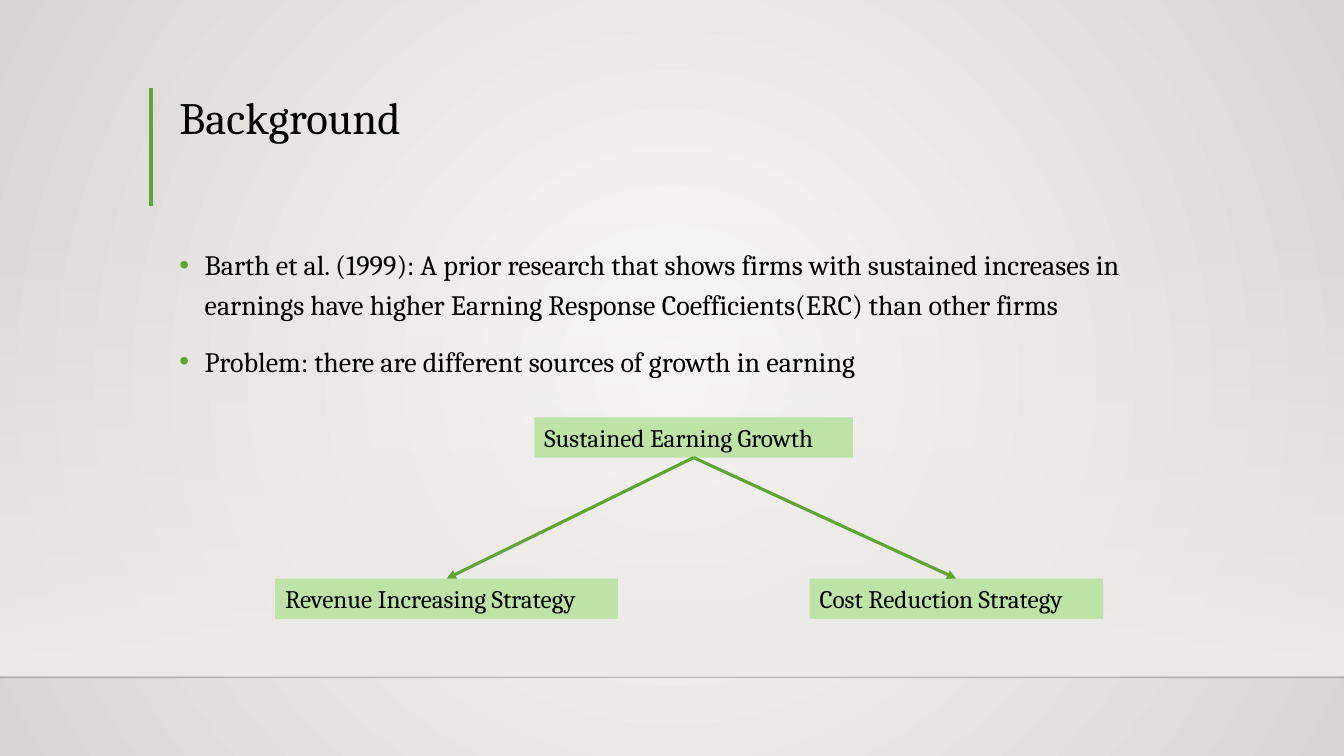
from lxml.etree import SubElement
from pptx import Presentation
from pptx.dml.color import RGBColor
from pptx.enum.shapes import MSO_CONNECTOR as LINK, MSO_SHAPE as SHAPE
from pptx.enum.text import MSO_ANCHOR as ANCHOR, MSO_AUTO_SIZE as SIZE, PP_ALIGN as ALIGN
from pptx.oxml import parse_xml
from pptx.oxml.ns import nsdecls, qn
from pptx.util import Inches, Pt

COLORS = {
    "text": "000000",
    "rule": "000001",
    "green": "5FA534",
    "pale": "BDE3A6",
    "light": "FAFAF9",
    "dark": "D7D5D2",
    "floor": "EDEBE7",
}
FONT = "Cambria"
LEFT = 1.68


def color(name):
    return RGBColor.from_string(COLORS[name])


def blend(stops, shade):
    marks = "".join(
        f'<a:gs pos="{pos * 1000}"><a:srgbClr val="{COLORS[name]}">'
        f'<a:alpha val="{alpha * 1000}"/></a:srgbClr></a:gs>'
        for pos, name, alpha in stops
    )
    return parse_xml(
        f'<a:gradFill {nsdecls("a")} rotWithShape="1">'
        f"<a:gsLst>{marks}</a:gsLst>{shade}</a:gradFill>"
    )


def swap_fill(props, fill):
    props.replace(props.find(qn("a:gradFill")), fill)


def place(shape, left, top, width, height):
    shape.left, shape.top = Inches(left), Inches(top)
    shape.width, shape.height = Inches(width), Inches(height)


def write(shape, text, size=18, anchor=ANCHOR.TOP, spacing=1.0, bullet=False):
    frame = shape.text_frame
    frame.word_wrap = True
    frame.auto_size = SIZE.NONE
    frame.vertical_anchor = anchor
    para = frame.paragraphs[0]
    para.alignment = ALIGN.LEFT
    para.line_spacing = spacing
    para.space_before = Pt(0)
    if bullet:
        props = para._p.get_or_add_pPr()
        props.set("marL", str(Inches(0.25)))
        props.set("indent", str(Inches(-0.25)))
        tint = SubElement(props, qn("a:buClr"))
        SubElement(tint, qn("a:srgbClr"), val=COLORS["green"])
        SubElement(props, qn("a:buFont"), typeface="Arial")
        SubElement(props, qn("a:buChar"), char="•")
    run = para.add_run()
    run.text = text
    run.font.name = FONT
    run.font.size = Pt(size)
    run.font.color.rgb = color("text")


def add_rect(slide, left, top, width, height):
    rect = slide.shapes.add_shape(
        SHAPE.RECTANGLE, Inches(left), Inches(top), Inches(width), Inches(height)
    )
    rect.shadow.inherit = False
    rect.line.fill.background()
    return rect


def add_label(slide, text, left, top, width):
    label = add_rect(slide, left, top, width, 0.4)
    label.fill.solid()
    label.fill.fore_color.rgb = color("pale")
    write(label, text)
    return label


def add_line(slide, start, end, tint, weight, alpha=None, arrow=False):
    line = slide.shapes.add_connector(LINK.STRAIGHT, *map(Inches, start + end))
    line.line.color.rgb = color(tint)
    line.line.width = Pt(weight)
    props = line._element.spPr
    if alpha:
        shade = props.find(".//" + qn("a:srgbClr"))
        SubElement(shade, qn("a:alpha"), val=str(alpha * 1000))
    if arrow:
        SubElement(props.find(qn("a:ln")), qn("a:tailEnd"), type="triangle")
    SubElement(props, qn("a:effectLst"))
    return line


def add_backdrop(slide):
    fill = slide.background.fill
    fill.gradient()
    center = (
        '<a:path path="circle">'
        '<a:fillToRect l="50000" t="50000" r="50000" b="50000"/></a:path>'
    )
    props = slide._element.cSld.bg.bgPr
    swap_fill(props, blend([(0, "light", 100), (100, "dark", 100)], center))

    floor = add_rect(slide, 0, 2.2, 13.33, 4.5)
    floor.fill.gradient()
    down = '<a:lin ang="5400000" scaled="0"/>'
    swap_fill(floor._element.spPr, blend([(0, "floor", 0), (100, "floor", 100)], down))

    add_line(slide, (0, 6.72), (13.33, 6.72), "rule", 1, alpha=20)
    add_line(slide, (1.5, 0.87), (1.5, 2.04), "green", 3)


def add_text(slide):
    title, body = slide.shapes.title, slide.placeholders[1]
    for holder in (title, body):
        slide.shapes._spTree.append(holder._element)
    place(title, LEFT, 0.81, 10.41, 0.67)
    write(title, "Background", size=32, anchor=ANCHOR.BOTTOM, spacing=0.9)
    place(body, LEFT, 2.34, 10.41, 0.93)
    write(
        body,
        "Barth et al. (1999): A prior research that shows firms with sustained "
        "increases in earnings have higher Earning Response Coefficients(ERC) "
        "than other firms",
        size=20, spacing=1.2, bullet=True,
    )
    issue = slide.shapes.add_textbox(
        Inches(LEFT), Inches(3.3), Inches(7.51), Inches(0.48)
    )
    write(
        issue,
        "Problem: there are different sources of growth in earning",
        size=20, spacing=1.2, bullet=True,
    )


def add_tree(slide):
    leaves = [
        add_label(slide, "Revenue Increasing Strategy", 2.73, 5.74, 3.4),
        add_label(slide, "Cost Reduction Strategy", 8.03, 5.74, 2.91),
    ]
    root = add_label(slide, "Sustained Earning Growth", 5.3, 4.14, 3.16)
    for leaf in leaves:
        link = add_line(slide, (6.88, 4.54), (6.88, 5.74), "green", 2.25, arrow=True)
        link.begin_connect(root, 2)
        link.end_connect(leaf, 0)


def main():
    deck = Presentation()
    deck.slide_width, deck.slide_height = Inches(13.33), Inches(7.5)
    slide = deck.slides.add_slide(deck.slide_layouts[1])
    add_backdrop(slide)
    add_text(slide)
    add_tree(slide)
    deck.save("out.pptx")


if __name__ == "__main__":
    main()
